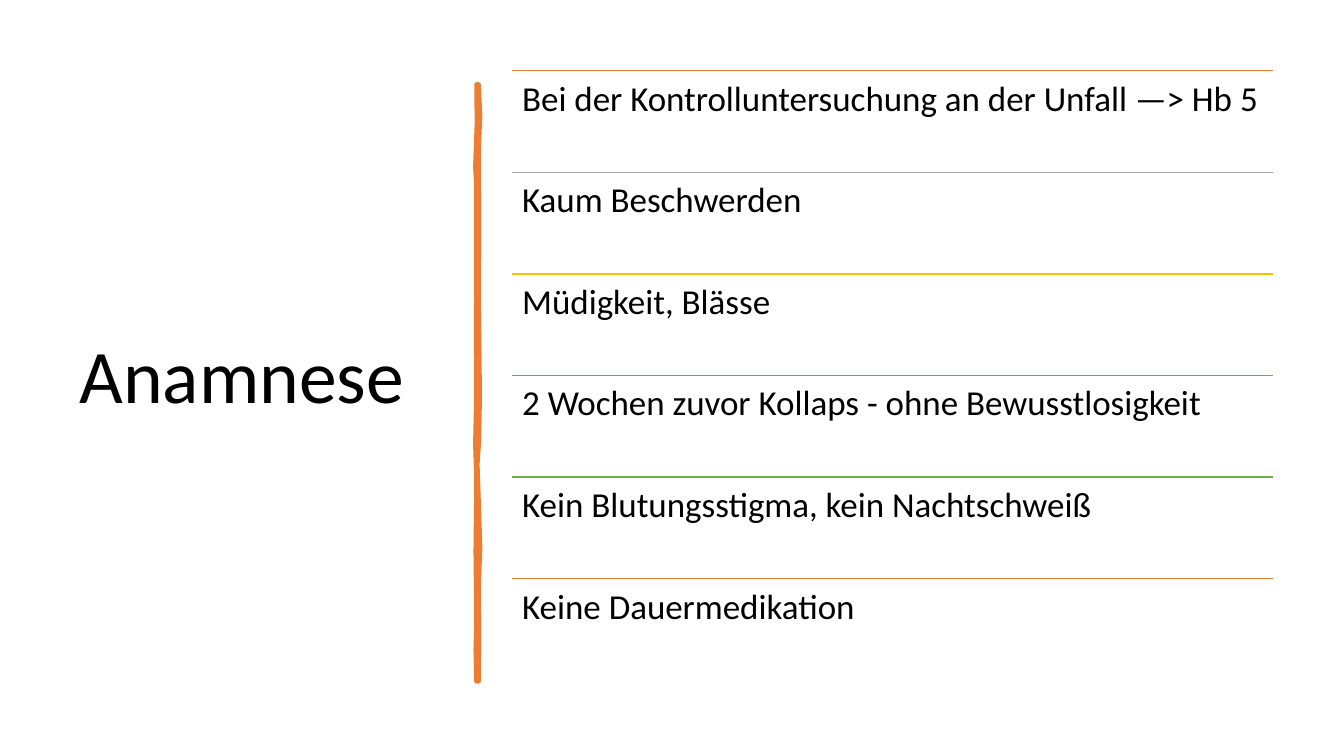
from lxml import etree
from pptx import Presentation
from pptx.dml.color import RGBColor
from pptx.enum import shapes, text
from pptx.oxml import ns
from pptx.util import Cm, Pt

# Content
TITLE = "Anamnese"
FINDINGS = [
    ("Bei der Kontrolluntersuchung an der Unfall —> Hb 5", "orange"),
    ("Kaum Beschwerden", "grey"),
    ("Müdigkeit, Blässe", "yellow"),
    ("2 Wochen zuvor Kollaps - ohne Bewusstlosigkeit", "blue"),
    ("Kein Blutungsstigma, kein Nachtschweiß", "green"),
    ("Keine Dauermedikation", "orange"),
]
COLORS = {
    "black": "000000", "orange": "ED7D31", "grey": "A5A5A5",
    "yellow": "FFC000", "blue": "5B9BD5", "green": "70AD47",
}
FONT = "Calibri"

# Layout in centimetres
LIST_LEFT, LIST_TOP, LIST_WIDTH, ROW_HEIGHT = 12.9, 1.78, 19.18, 2.56
# Hand-drawn divider: right edge downwards, then left edge upwards
DIVIDER = [
    (12.06, 2.13), (12.1, 2.9), (12.06, 3.8), (12.07, 5.75), (12.06, 7.45),
    (12.08, 9.05), (12.09, 10), (12.07, 11.1), (12.03, 11.7), (12.06, 12.6),
    (12.1, 13.8), (12.06, 14.8), (12.07, 16), (12.06, 17.17),
    (12.01, 17.17), (11.99, 16.4), (12.01, 15.6), (11.99, 13.9), (12.01, 12.1),
    (11.98, 11.2), (12.01, 9.8), (12, 8.5), (12.01, 6.1),
    (12.01, 4.75), (11.98, 4.2), (12.02, 3.1), (12.01, 2.13),
]


def color(name):
    return RGBColor.from_string(COLORS[name])


def write(frame, words, size):
    frame.word_wrap = True
    frame.text = words
    para = frame.paragraphs[0]
    para.alignment = text.PP_ALIGN.LEFT
    para.line_spacing = 0.9
    para.font.name = FONT
    para.font.size = Pt(size)
    para.font.color.rgb = color("black")


deck = Presentation()
deck.slide_width, deck.slide_height = Cm(33.87), Cm(19.05)
page = deck.slides.add_slide(deck.slide_layouts[5])

# Title
title = page.shapes.title
title.left, title.top, title.width, title.height = Cm(1.75), Cm(1.78), Cm(9.5), Cm(15.52)
write(title.text_frame, TITLE, 54)
title.text_frame.vertical_anchor = text.MSO_ANCHOR.MIDDLE

# Divider
points = [(Cm(x), Cm(y)) for x, y in DIVIDER]
builder = page.shapes.build_freeform(*points[0])
builder.add_line_segments(points[1:], close=True)
divider = builder.convert_to_shape()
divider.shadow.inherit = False
divider.fill.solid()
divider.fill.fore_color.rgb = color("orange")
divider.line.color.rgb = color("orange")
divider.line.width = Pt(3.25)
etree.SubElement(divider.line._get_or_add_ln(), ns.qn("a:round"))

# Findings, each below its own rule
for index, (words, tint) in enumerate(FINDINGS):
    left, top = Cm(LIST_LEFT), Cm(LIST_TOP + index * ROW_HEIGHT)
    width = Cm(LIST_WIDTH)
    rule = page.shapes.add_connector(
        shapes.MSO_CONNECTOR.STRAIGHT, left, top, left + width, top)
    rule.line.color.rgb = color(tint)
    rule.line.width = Pt(1)
    etree.SubElement(rule._element.spPr, ns.qn("a:effectLst"))

    box = page.shapes.add_textbox(left, top, width, Cm(ROW_HEIGHT))
    frame = box.text_frame
    frame.margin_left = frame.margin_right = Cm(0.26)
    frame.margin_top = frame.margin_bottom = Cm(0.26)
    write(frame, words, 25)

deck.save("out.pptx")
